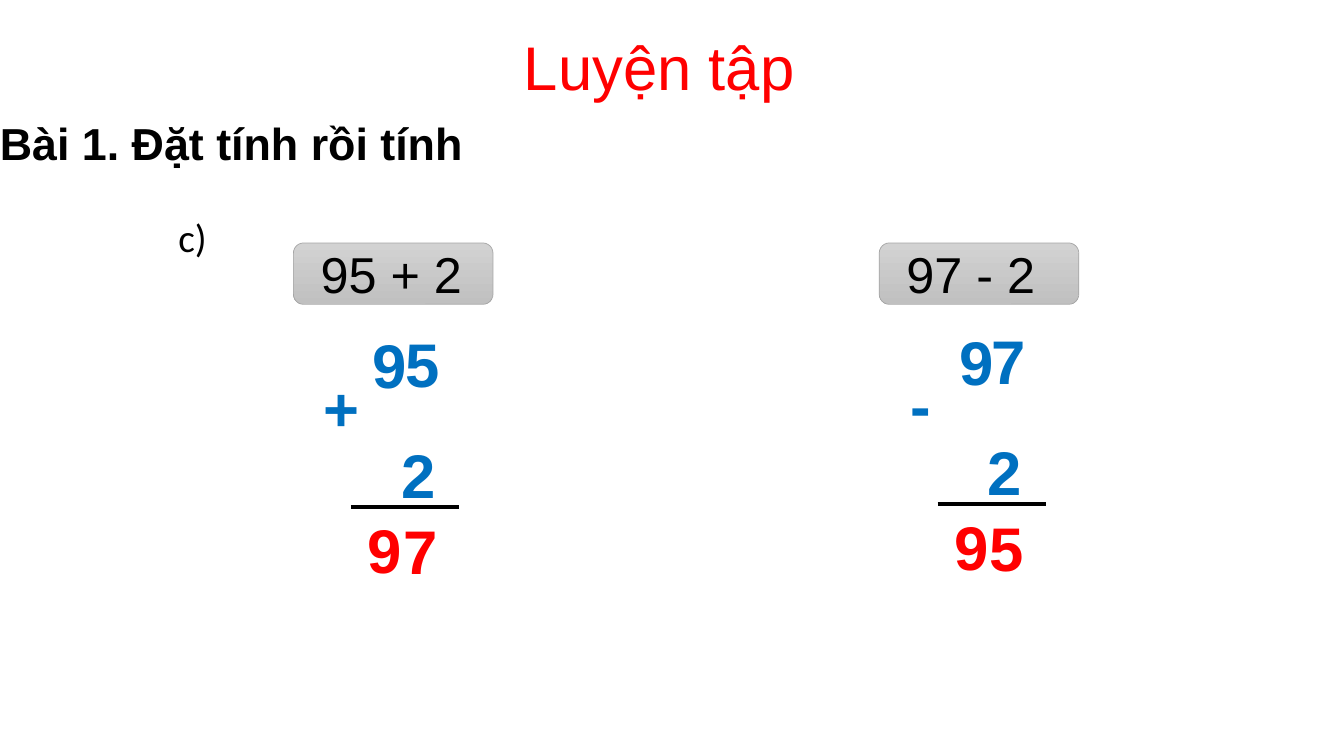
from dataclasses import dataclass

from pptx import Presentation
from pptx.dml.color import RGBColor as RGB
from pptx.enum.shapes import MSO_CONNECTOR as CONN, MSO_SHAPE as SHAPE
from pptx.enum.text import MSO_ANCHOR as ANCHOR, PP_ALIGN as ALIGN
from pptx.oxml.ns import qn
from pptx.slide import Slide
from pptx.text.text import TextFrame
from pptx.util import Inches, Pt
from lxml.etree import SubElement


@dataclass(frozen=True)
class Theme:
    font: str = "Arial"
    label_font: str = "Calibri"
    black: RGB = RGB(0, 0, 0)
    red: RGB = RGB(0xFF, 0, 0)
    blue: RGB = RGB(0, 0x70, 0xC0)
    card_top: RGB = RGB(0xD2, 0xD2, 0xD2)
    card_bottom: RGB = RGB(0xC0, 0xC0, 0xC0)
    card_line: RGB = RGB(0xA5, 0xA5, 0xA5)
    big: int = 44
    card: int = 36
    heading: int = 32
    label: int = 28


@dataclass(frozen=True)
class Sum:
    """One column calculation; x and y place the top left of its digits."""
    expression: str
    tens: str
    units: str
    sign: str
    operand: str
    result_tens: str
    result_units: str
    card_x: float
    x: float
    y: float


T = Theme()
CARD_Y, CARD_W, CARD_H = 2.41, 1.98, 0.61
DIGIT_H = 0.84

SUMS = [
    Sum("95 + 2", "9", "5", "+", "2", "9", "7", 2.91, 3.6, 3.19),
    Sum("97 - 2", "9", "7", "-", "2", "9", "5", 8.72, 9.42, 3.16),
]


def add_run(tf: TextFrame, text: str, size: int, color: RGB,
            bold: bool = False, font: str = T.font) -> None:
    r = tf.paragraphs[0].add_run()
    r.text = text
    r.font.name = font
    r.font.size = Pt(size)
    r.font.bold = bold
    r.font.color.rgb = color


def add_text(s: Slide, text: str, x: float, y: float, w: float, h: float,
             size: int, color: RGB, bold: bool = False,
             font: str = T.font) -> None:
    tf = s.shapes.add_textbox(Inches(x), Inches(y), Inches(w), Inches(h)).text_frame
    tf.word_wrap = True
    add_run(tf, text, size, color, bold, font)


def add_card(s: Slide, text: str, x: float) -> None:
    sp = s.shapes.add_shape(SHAPE.ROUNDED_RECTANGLE, Inches(x), Inches(CARD_Y),
                            Inches(CARD_W), Inches(CARD_H))
    sp.shadow.inherit = False
    sp.fill.gradient()
    sp.fill.gradient_angle = 270
    for stop, color in zip(sp.fill.gradient_stops, (T.card_top, T.card_bottom)):
        stop.color.rgb = color
    sp.line.color.rgb = T.card_line
    sp.line.width = Pt(0.5)
    tf = sp.text_frame
    tf.margin_left = Inches(0.24)
    tf.vertical_anchor = ANCHOR.MIDDLE
    tf.paragraphs[0].alignment = ALIGN.LEFT
    add_run(tf, text, T.card, T.black)


def add_rule(s: Slide, x: float, y: float, w: float) -> None:
    line = s.shapes.add_connector(CONN.STRAIGHT, Inches(x), Inches(y),
                                  Inches(x + w), Inches(y))
    line.line.color.rgb = T.black
    line.line.width = Pt(3)
    SubElement(line._element.spPr, qn("a:effectLst"))


def add_sum(s: Slide, item: Sum) -> None:
    # Digits and sign, offset from the tens digit of the first number
    for text, dx, dy, w, color in (
        (item.tens, 0, 0, 0.65, T.blue),
        (item.units, 0.32, -0.01, 0.7, T.blue),
        (item.operand, 0.28, 1.1, 0.57, T.blue),
        (item.sign, -0.49, 0.43, 0.73, T.blue),
        (item.result_tens, -0.05, 1.84, 0.5, T.red),
        (item.result_units, 0.3, 1.85, 0.55, T.red),
    ):
        add_text(s, text, item.x + dx, item.y + dy, w, DIGIT_H,
                 T.big, color, bold=True)
    add_rule(s, item.x - 0.12, item.y + 1.84, 1.07)
    add_card(s, item.expression, item.card_x)


def main() -> None:
    prs = Presentation()
    prs.slide_width, prs.slide_height = Inches(13.33), Inches(7.5)
    s = prs.slides.add_slide(prs.slide_layouts[5])

    # Title
    title = s.shapes.title
    title.left, title.top = Inches(0.79), Inches(-0.02)
    title.width, title.height = Inches(11.5), Inches(1.45)
    tf = title.text_frame
    tf.vertical_anchor = ANCHOR.MIDDLE
    p = tf.paragraphs[0]
    p.alignment = ALIGN.CENTER
    p.line_spacing = 0.9
    add_run(tf, "Luyện tập", T.big, T.red)

    # Exercise heading and part label
    add_text(s, "Bài 1. Đặt tính rồi tính", -0.1, 1.1, 7.82, 0.64,
             T.heading, T.black, bold=True)
    add_text(s, "c)", 1.67, 2.07, 0.6, 0.57, T.label, T.black, font=T.label_font)

    # Calculations
    for item in SUMS:
        add_sum(s, item)

    prs.save("out.pptx")


if __name__ == "__main__":
    main()
